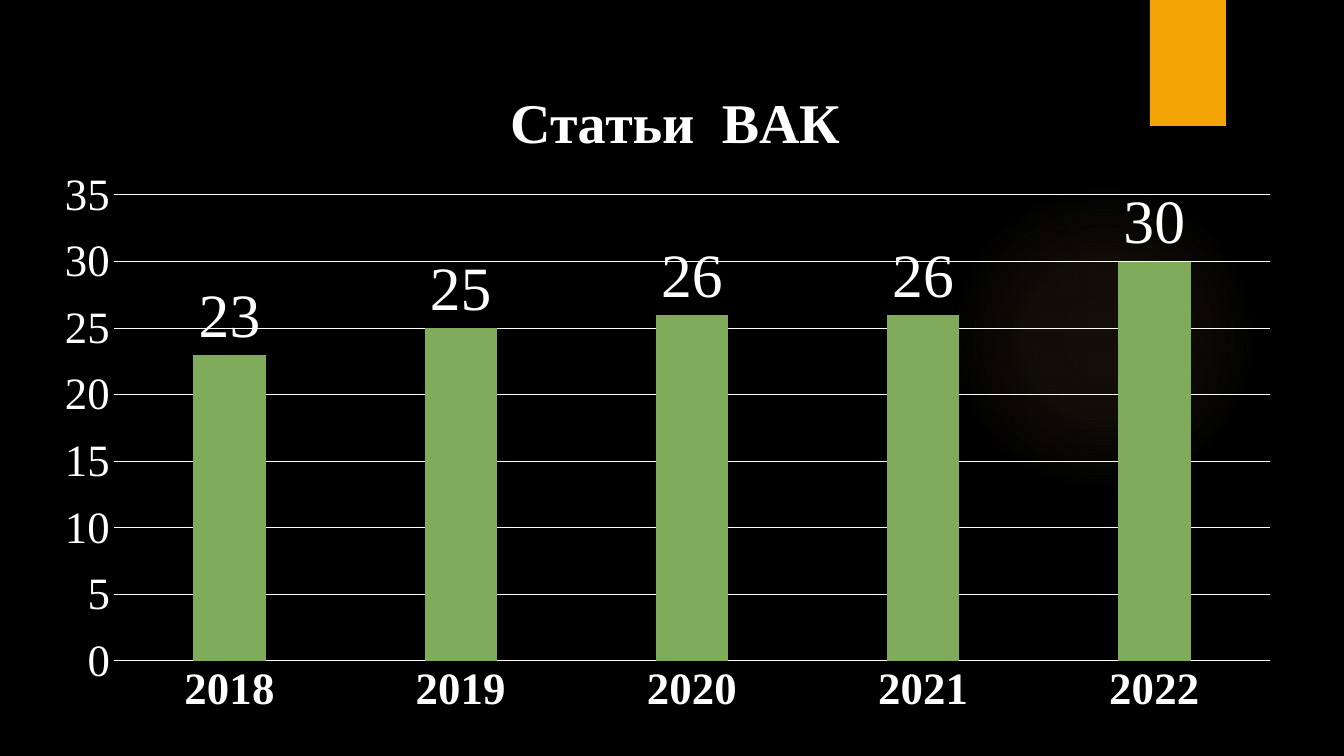
import lxml.etree
import pptx
import pptx.chart.data
import pptx.dml.color
import pptx.enum.chart
import pptx.enum.shapes
import pptx.oxml
import pptx.oxml.ns
import pptx.util

RGBColor = pptx.dml.color.RGBColor
BLACK = RGBColor(0x00, 0x00, 0x00)
WHITE = RGBColor(0xFF, 0xFF, 0xFF)
ORANGE = RGBColor(0xF5, 0xA4, 0x08)
GLOW = RGBColor(0xFA, 0xC9, 0x6A)
GREEN = RGBColor(0x7F, 0xAB, 0x5B)
SERIF = "Times New Roman"

TITLE = "Статьи  ВАК"
ARTICLES = {"2018": 23, "2019": 25, "2020": 26, "2021": 26, "2022": 30}
GLOW_STOPS = [(0, 7), (36, 6), (69, 0)]  # position %, opacity %

# Left, top, width, height in px
SLIDE_SIZE = (1344, 756)
GLOW_BOX = (949, 184, 310, 310)
RIBBON_BOX = (1150, 0, 76, 126)
CHART_BOX = (40, 43, 1255, 684)
PLOT_BOX = (114, 195, 1156, 466)
TITLE_CORNER = (500, 77)
EMU_PER_PX = 12192000 / 1344


def px(*lengths):
    return [pptx.util.Emu(round(length * EMU_PER_PX)) for length in lengths]


def style_font(font, size, name=SERIF, color=WHITE, bold=False):
    font.size = pptx.util.Pt(size)
    font.name = name
    font.bold = bold
    font.color.rgb = color


def write(frame, text, **style):
    frame.text = text
    style_font(frame.paragraphs[0].runs[0].font, **style)


def add_decor(slide, preset, box, color):
    decor = slide.shapes.add_shape(preset, *px(*box))
    decor.shadow.inherit = False
    decor.line.fill.background()
    decor.fill.solid()
    decor.fill.fore_color.rgb = color
    return decor


def make_glow(shape, color, stops):
    """Replace the solid fill by a radial gradient fading outwards."""
    stops_xml = "".join(
        f'<a:gs pos="{pos * 1000}"><a:srgbClr val="{color}">'
        f'<a:alpha val="{opacity * 1000}"/></a:srgbClr></a:gs>'
        for pos, opacity in stops)
    gradient = pptx.oxml.parse_xml(
        f'<a:gradFill {pptx.oxml.ns.nsdecls("a")}><a:gsLst>{stops_xml}</a:gsLst>'
        '<a:path path="circle"><a:fillToRect l="50000" t="50000" r="50000" b="50000"/>'
        '</a:path></a:gradFill>')
    solid = shape.element.spPr.find(pptx.oxml.ns.qn("a:solidFill"))
    solid.getparent().replace(solid, gradient)


def place(element, left, top, width=None, height=None):
    """Fix a chart part at a slide position, as fractions of the chart."""
    chart_left, chart_top, chart_width, chart_height = CHART_BOX
    values = {"x": (left - chart_left) / chart_width,
              "y": (top - chart_top) / chart_height}
    modes = {"xMode": "edge", "yMode": "edge"}
    if width:
        modes = {"layoutTarget": "inner", **modes}
        values.update(w=width / chart_width, h=height / chart_height)
    qn = pptx.oxml.ns.qn
    layout = element.find(qn("c:layout"))
    if layout is None:
        layout = lxml.etree.Element(qn("c:layout"))
        text = element.find(qn("c:tx"))
        element.insert(0 if text is None else 1, layout)
    for child in list(layout):
        layout.remove(child)
    manual = lxml.etree.SubElement(layout, qn("c:manualLayout"))
    for tag, value in {**modes, **values}.items():
        text = value if tag in modes else f"{value:.4f}"
        lxml.etree.SubElement(manual, qn(f"c:{tag}")).set("val", text)


def style_line(line):
    line.color.rgb = WHITE
    line.width = pptx.util.Pt(0.75)


def add_articles_chart(slide):
    articles = pptx.chart.data.CategoryChartData()
    articles.categories = list(ARTICLES)
    articles.add_series("Series 1", list(ARTICLES.values()))
    chart = slide.shapes.add_chart(
        pptx.enum.chart.XL_CHART_TYPE.COLUMN_CLUSTERED, *px(*CHART_BOX), articles).chart
    style_font(chart.font, 10, name="League Spartan")
    chart.has_legend = False
    chart.has_title = True
    write(chart.chart_title.text_frame, TITLE, size=40, bold=True)
    chart.chart_title.include_in_layout = False

    years, counts = chart.category_axis, chart.value_axis
    for axis in (years, counts):
        axis.major_tick_mark = pptx.enum.chart.XL_TICK_MARK.NONE
        axis.minor_tick_mark = pptx.enum.chart.XL_TICK_MARK.NONE
        style_font(axis.tick_labels.font, 32, bold=axis is years)
    style_line(years.format.line)
    counts.format.line.fill.background()
    counts.minimum_scale, counts.maximum_scale, counts.major_unit = 0, 35, 5
    counts.has_major_gridlines = True
    style_line(counts.major_gridlines.format.line)

    plot = chart.plots[0]
    plot.gap_width, plot.overlap = 219, -27
    plot.vary_by_categories = False
    columns = plot.series[0]
    columns.format.fill.solid()
    columns.format.fill.fore_color.rgb = GREEN
    labels = columns.data_labels
    labels.show_value = True
    labels.position = pptx.enum.chart.XL_LABEL_POSITION.OUTSIDE_END
    style_font(labels.font, 44)

    qn = pptx.oxml.ns.qn
    body = chart.element.find(qn("c:chart"))
    place(body.find(qn("c:title")), *TITLE_CORNER)
    place(body.find(qn("c:plotArea")), *PLOT_BOX)


def main():
    deck = pptx.Presentation()
    deck.slide_width, deck.slide_height = px(*SLIDE_SIZE)
    slide = deck.slides.add_slide(deck.slide_layouts[6])
    slide.background.fill.solid()
    slide.background.fill.fore_color.rgb = BLACK

    presets = pptx.enum.shapes.MSO_SHAPE
    glow = add_decor(slide, presets.OVAL, GLOW_BOX, GLOW)
    make_glow(glow, GLOW, GLOW_STOPS)
    add_decor(slide, presets.RECTANGLE, RIBBON_BOX, ORANGE)
    add_articles_chart(slide)
    deck.save("out.pptx")


if __name__ == "__main__":
    main()
